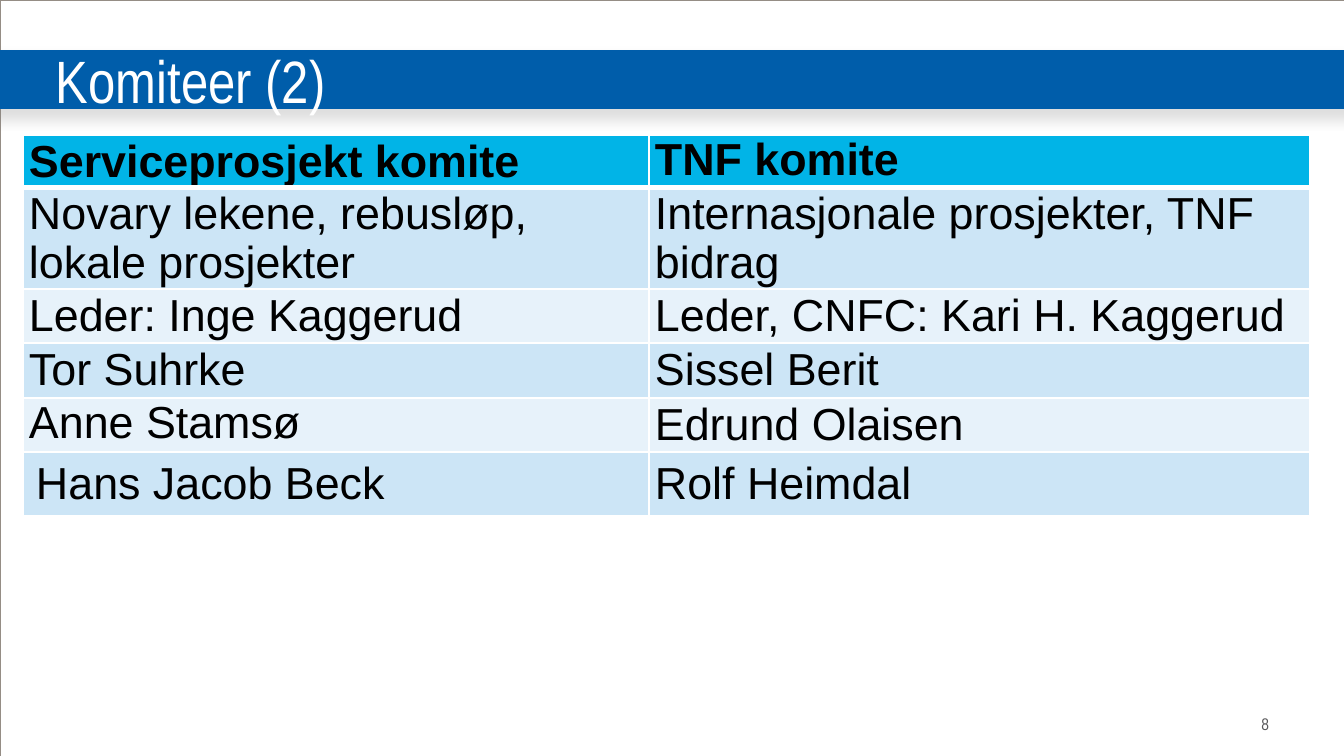
from lxml.etree import SubElement
from pptx import Presentation
from pptx.dml.color import RGBColor
from pptx.enum.shapes import MSO_SHAPE
from pptx.enum.text import MSO_ANCHOR, PP_ALIGN
from pptx.oxml.ns import qn
from pptx.util import Emu, Pt

# Content
TITLE = "Komiteer (2)"
PAGE_NUMBER = "8"
COMMITTEES = [
    ("Serviceprosjekt komite", "TNF komite"),
    ("Novary lekene, rebusløp, lokale prosjekter", "Internasjonale prosjekter, TNF bidrag"),
    ("Leder: Inge Kaggerud", "Leder, CNFC: Kari H. Kaggerud"),
    ("Tor Suhrke", "Sissel Berit"),
    ("Anne Stamsø", "Edrund Olaisen"),
    ("Hans Jacob Beck", "Rolf Heimdal"),
]
TOP_CELLS = {(0, 1), (4, 0), (5, 0)}
ROOMY_CELL = (5, 0)

# Layout in px
SLIDE_SIZE = (1344, 756)
BAND = (-11, 50, 1367, 59)
TITLE_BOX = (56, 50, 1288, 59)
NUMBER_BOX = (1042, 714, 227, 20)
TABLE_ORIGIN = (23, 135)
COLUMN_WIDTHS = (626, 661)
ROW_HEIGHTS = (53, 101, 54, 55, 54, 63)

COLORS = {
    "band": "005DAA", "frame": "958D85", "shadow": "808080",
    "header": "01B4E7", "odd": "CCE5F6", "even": "E7F2FA",
    "text": "000000", "white": "FFFFFF", "number": "58585A",
}


def px(value):
    return Emu(round(value * 914400 / 134.4))


def color(name):
    return RGBColor.from_string(COLORS[name])


def format_text(text_frame, font_name, size, color_name, bold=False):
    for paragraph in text_frame.paragraphs:
        for run in paragraph.runs:
            run.font.name = font_name
            run.font.size = Pt(size)
            run.font.bold = bold
            run.font.color.rgb = color(color_name)


def set_margins(target, horizontal=0, vertical=0):
    target.margin_left = target.margin_right = px(horizontal)
    target.margin_top = target.margin_bottom = px(vertical)


def add_rectangle(slide, box):
    shape = slide.shapes.add_shape(MSO_SHAPE.RECTANGLE, *map(px, box))
    shape.shadow.inherit = False
    return shape


def add_soft_shadow(shape):
    effects = shape._element.spPr.find(qn("a:effectLst"))
    shadow = SubElement(effects, qn("a:outerShdw"), blurRad=str(Pt(7)),
                        dist=str(Pt(4.8)), dir="5400000", algn="t", rotWithShape="0")
    shade = SubElement(shadow, qn("a:srgbClr"), val=COLORS["shadow"])
    SubElement(shade, qn("a:alpha"), val="25000")


def set_borders(cell, widths):
    properties = cell._tc.get_or_add_tcPr()
    for side, width in widths.items():
        line = SubElement(properties, qn(f"a:ln{side}"), w=str(Pt(width)))
        fill = SubElement(line, qn("a:solidFill"))
        SubElement(fill, qn("a:srgbClr"), val=COLORS["white"])


def add_committee_table(slide):
    frame = slide.shapes.add_table(
        len(COMMITTEES), len(COLUMN_WIDTHS), *map(px, TABLE_ORIGIN),
        px(sum(COLUMN_WIDTHS)), px(sum(ROW_HEIGHTS)))
    table = frame.table
    for column, width in zip(table.columns, COLUMN_WIDTHS):
        column.width = px(width)
    for row_index, (names, height) in enumerate(zip(COMMITTEES, ROW_HEIGHTS)):
        table.rows[row_index].height = px(height)
        is_header = row_index == 0
        fill_name = "header" if is_header else "odd" if row_index % 2 else "even"
        for column_index, name in enumerate(names):
            position = (row_index, column_index)
            cell = table.cell(*position)
            cell.text_frame.text = name
            format_text(cell.text_frame, "Arial", 24, "text", is_header)
            set_margins(cell, *((13, 7) if position == ROOMY_CELL else (6, 0)))
            cell.vertical_anchor = MSO_ANCHOR.TOP if position in TOP_CELLS else MSO_ANCHOR.MIDDLE
            set_borders(cell, {"L": 1, "R": 1, "T": 3 if row_index == 1 else 1,
                               "B": 3 if is_header else 1})
            cell.fill.solid()
            cell.fill.fore_color.rgb = color(fill_name)


def main():
    presentation = Presentation()
    presentation.slide_width, presentation.slide_height = map(px, SLIDE_SIZE)
    slide = presentation.slides.add_slide(presentation.slide_layouts[5])

    # Page number
    number = slide.shapes.add_textbox(*map(px, NUMBER_BOX))
    number.text_frame.word_wrap = True
    set_margins(number.text_frame)
    number.text_frame.text = PAGE_NUMBER
    number.text_frame.paragraphs[0].alignment = PP_ALIGN.RIGHT
    format_text(number.text_frame, "Arial Narrow", 9, "number")

    # Slide frame and title band
    frame = add_rectangle(slide, (0, 0, *SLIDE_SIZE))
    frame.fill.background()
    frame.line.color.rgb = color("frame")
    frame.line.width = Pt(0.13)
    band = add_rectangle(slide, BAND)
    band.fill.solid()
    band.fill.fore_color.rgb = color("band")
    band.line.fill.background()
    add_soft_shadow(band)

    # Title, brought in front of the band
    title = slide.shapes.title
    slide.shapes._spTree.append(title._element)
    title.left, title.top, title.width, title.height = map(px, TITLE_BOX)
    title.text_frame.text = TITLE
    title.text_frame.vertical_anchor = MSO_ANCHOR.MIDDLE
    title.text_frame.paragraphs[0].alignment = PP_ALIGN.LEFT
    set_margins(title.text_frame)
    format_text(title.text_frame, "Arial Narrow", 32, "white")

    add_committee_table(slide)
    presentation.save("out.pptx")


if __name__ == "__main__":
    main()
